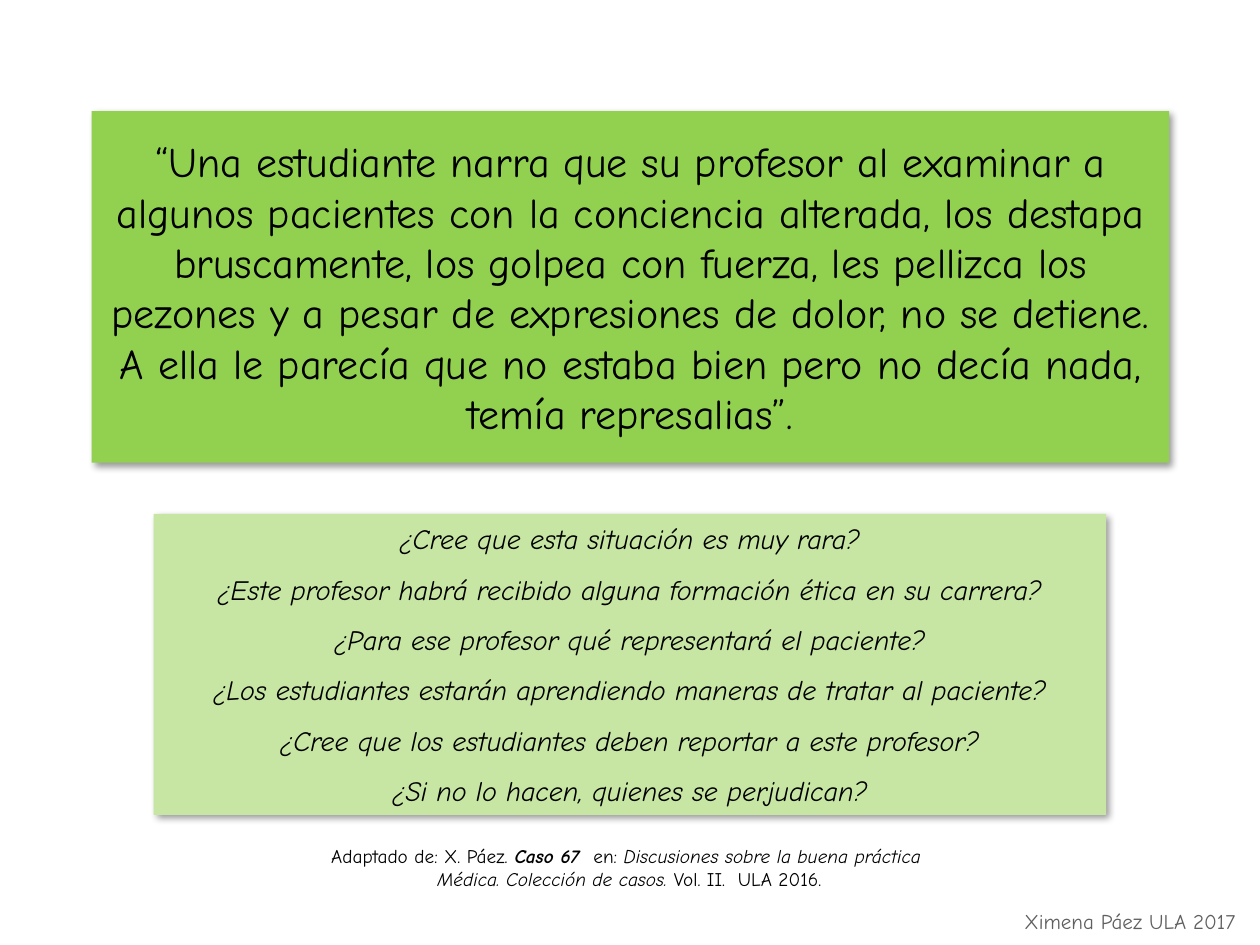
"""Build the clinical ethics case slide with its discussion questions."""
from dataclasses import dataclass
from typing import Optional

import lxml.etree
import pptx
import pptx.dml.color
import pptx.enum.shapes
import pptx.enum.text
import pptx.oxml.ns
import pptx.util

Cm = pptx.util.Cm
Pt = pptx.util.Pt


@dataclass(frozen=True)
class Theme:
    font: str = "Comic Neue"
    ink: str = "000000"
    muted: str = "5F5F5F"
    case_fill: str = "92D050"
    question_fill: str = "C7E6A4"
    case_size: float = 24
    question_size: float = 16
    question_gap: float = 9.6
    source_size: float = 11
    author_size: float = 12


@dataclass(frozen=True)
class Run:
    text: str
    bold: bool = False
    italic: bool = False


@dataclass(frozen=True)
class Block:
    left: float
    top: float
    width: float
    height: float
    paragraphs: list[list[Run]]
    size: float
    color: str
    fill: Optional[str] = None
    gap: float = 0
    wrap: bool = True


THEME = Theme()

CASE = (
    "“Una estudiante narra que su profesor al examinar a algunos pacientes con la "
    "conciencia alterada, los destapa bruscamente, los golpea con fuerza, les pellizca "
    "los pezones y a pesar de expresiones de dolor, no se detiene. A ella le parecía "
    "que no estaba bien pero no decía nada, temía represalias”."
)
QUESTIONS = [
    "¿Cree que esta situación es muy rara?",
    "¿Este profesor habrá recibido alguna formación ética en su carrera?",
    "¿Para ese profesor qué representará el paciente?",
    "¿Los estudiantes estarán aprendiendo maneras de tratar al paciente?",
    "¿Cree que los estudiantes deben reportar a este profesor?",
    "¿Si no lo hacen, quienes se perjudican?",
]
SOURCE = [
    [
        Run("Adaptado de: X. Páez. "),
        Run("Caso 67  ", bold=True, italic=True),
        Run("en: "),
        Run("Discusiones sobre la buena práctica ", italic=True),
    ],
    [Run("Médica. Colección de casos. ", italic=True), Run("Vol. II.  ULA 2016.")],
]

BLOCKS = [
    Block(20.24, 18.19, 5.08, 0.76, [[Run("Ximena Páez ULA 2017")]],
          THEME.author_size, THEME.muted, wrap=False),
    Block(1.85, 2.24, 21.72, 7.09, [[Run(CASE)]],
          THEME.case_size, THEME.ink, fill=THEME.case_fill),
    Block(5.82, 16.89, 13.74, 1.19, SOURCE, THEME.source_size, THEME.ink),
    Block(3.1, 10.36, 19.2, 6.07, [[Run(q, italic=True)] for q in QUESTIONS],
          THEME.question_size, THEME.ink, fill=THEME.question_fill,
          gap=THEME.question_gap),
]


def rgb(color: str) -> pptx.dml.color.RGBColor:
    return pptx.dml.color.RGBColor.from_string(color)


def add_shadow(sp) -> None:
    qn = pptx.oxml.ns.qn
    sp.shadow.inherit = False
    effects = sp._element.spPr.find(qn("a:effectLst"))
    shadow = lxml.etree.SubElement(
        effects, qn("a:outerShdw"), blurRad=str(Pt(4)), dist=str(Pt(3)),
        dir="2700000", algn="tl", rotWithShape="0")
    color = lxml.etree.SubElement(shadow, qn("a:srgbClr"), val=THEME.ink)
    lxml.etree.SubElement(color, qn("a:alpha"), val="40000")


def write_text(tf, block: Block) -> None:
    tf.word_wrap = block.wrap
    for i, runs in enumerate(block.paragraphs):
        p = tf.add_paragraph() if i else tf.paragraphs[0]
        p.alignment = pptx.enum.text.PP_ALIGN.CENTER
        p.space_before = Pt(block.gap if i else 0)
        for run in runs:
            r = p.add_run()
            r.text = run.text
            r.font.name = THEME.font
            r.font.size = Pt(block.size)
            r.font.bold = run.bold
            r.font.italic = run.italic
            r.font.color.rgb = rgb(block.color)


def draw_block(s, block: Block) -> None:
    box = [Cm(v) for v in (block.left, block.top, block.width, block.height)]
    if block.fill:
        sp = s.shapes.add_shape(pptx.enum.shapes.MSO_SHAPE.RECTANGLE, *box)
        sp.fill.solid()
        sp.fill.fore_color.rgb = rgb(block.fill)
        sp.line.fill.background()
        add_shadow(sp)
        sp.text_frame.vertical_anchor = pptx.enum.text.MSO_ANCHOR.MIDDLE
    else:
        sp = s.shapes.add_textbox(*box)
    write_text(sp.text_frame, block)


def main() -> None:
    prs = pptx.Presentation()
    prs.slide_width, prs.slide_height = Cm(25.4), Cm(19.05)
    s = prs.slides.add_slide(prs.slide_layouts[6])
    for block in BLOCKS:
        draw_block(s, block)
    prs.save("out.pptx")


if __name__ == "__main__":
    main()
